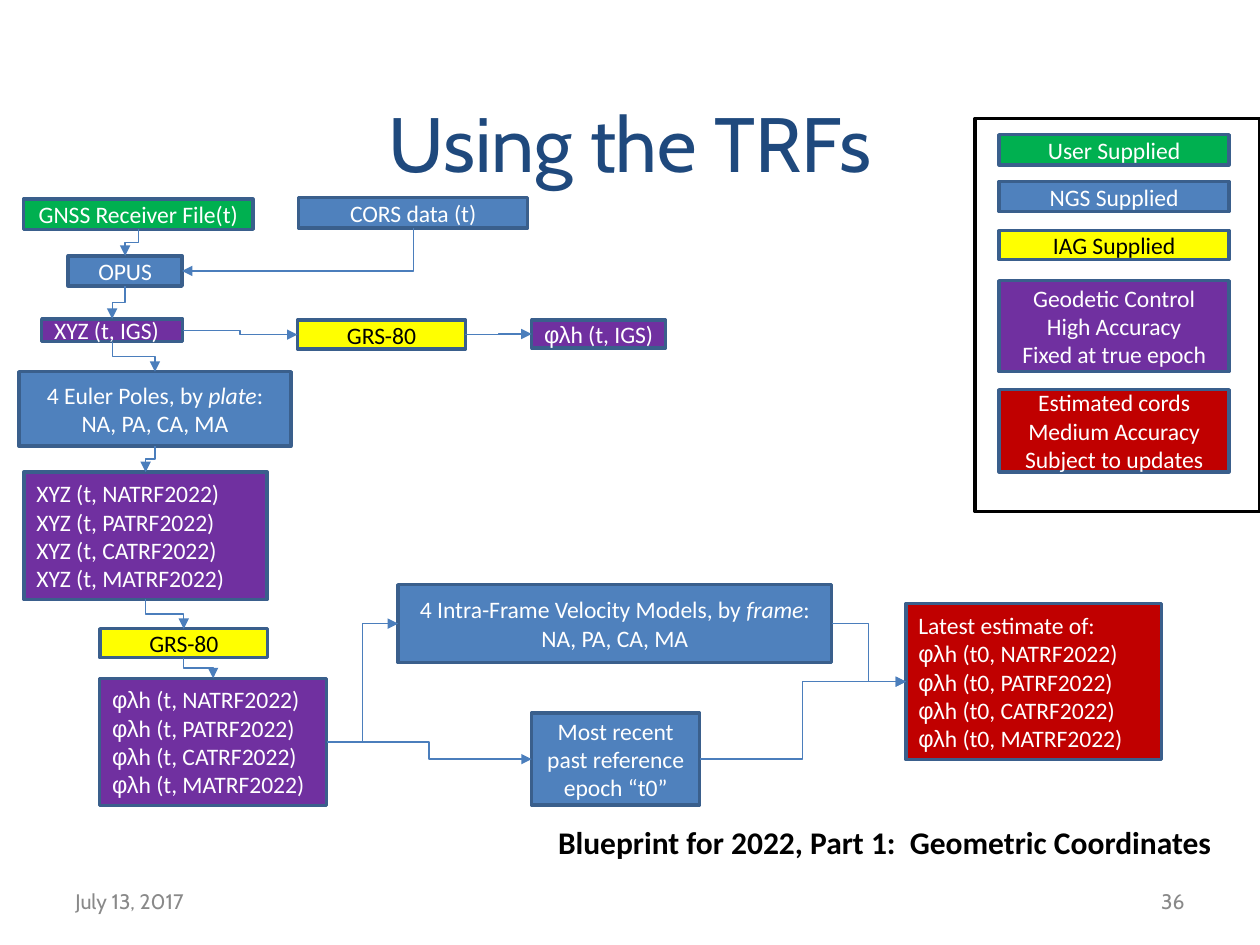
"""Build the slide on using the terrestrial reference frames."""
from lxml import etree
from pptx import Presentation
from pptx.dml.color import RGBColor
from pptx.enum import shapes, text
from pptx.oxml import ns
from pptx.util import Pt

LEFT, MID, RIGHT = text.PP_ALIGN.LEFT, text.PP_ALIGN.CENTER, text.PP_ALIGN.RIGHT
TOP, WEST, BASE, EAST = range(4)
GREEN, BLUE, GOLD, PLUM, RED = "00B050", "4F81BD", "FFFF00", "7030A0", "C00000"
WHITE, BLACK, GREY, NAVY = "FFFFFF", "000000", "898989", "1F497D"
EDGE, WIRE = "3A5F8C", "4B7EBC"


def tint(code):
    return RGBColor.from_string(code)


class Deck:
    def __init__(self, wide, high):
        self.file = Presentation()
        self.file.slide_width, self.file.slide_height = Pt(wide), Pt(high)
        self.slide = self.file.slides.add_slide(self.file.slide_layouts[5])
        self.items = self.slide.shapes

    def fill_in(self, frame, lines, size, face, hue, align, bold=False):
        """Fill a frame; *stars* mark italics, and Greek letters take Arial."""
        frame.vertical_anchor = text.MSO_ANCHOR.MIDDLE
        for n, line in enumerate(lines):
            para = frame.add_paragraph() if n else frame.paragraphs[0]
            para.alignment = align
            font = para.font
            font.size, font.name, font.bold = Pt(size), face, bold
            font.color.rgb = tint(hue)
            for k, part in enumerate(line.split("*")):
                for bit in filter(None, part.partition("φλ")):
                    run = para.add_run()
                    run.text = bit
                    if k % 2:
                        run.font.italic = True
                    if bit == "φλ":
                        run.font.name = "Arial"

    def title(self, words, *area):
        item = self.items.title
        item.left, item.top, item.width, item.height = map(Pt, area)
        self.fill_in(item.text_frame, [words], 44, "Cabin", NAVY, MID)

    def label(self, words, area, size, face, hue, align=LEFT, bold=False, wrap=True):
        frame = self.items.add_textbox(*map(Pt, area)).text_frame
        frame.word_wrap = wrap
        self.fill_in(frame, [words], size, face, hue, align, bold)

    def box(self, area, fill, lines=(), align=MID, edge=EDGE):
        item = self.items.add_shape(shapes.MSO_SHAPE.RECTANGLE, *map(Pt, area))
        item.shadow.inherit = False
        if fill:
            item.fill.solid()
            item.fill.fore_color.rgb = tint(fill)
        else:
            item.fill.background()
        item.line.color.rgb, item.line.width = tint(edge), Pt(2)
        hue = BLACK if fill == GOLD else WHITE
        self.fill_in(item.text_frame, lines, 13.5, "Calibri", hue, align)
        return item

    def join(self, start, out, end, into):
        """Run an elbow arrow from one side of a box to a side of another."""
        wire = self.items.add_connector(shapes.MSO_CONNECTOR.ELBOW, 0, 0, 0, 0)
        wire.begin_connect(start, out)
        wire.end_connect(end, into)
        wire.line.color.rgb, wire.line.width = tint(WIRE), Pt(0.75)
        props = wire._element.spPr
        if out == BASE:
            self.turn(wire, props)
        if (out, into) == (BASE, EAST):
            props.find(ns.qn("a:prstGeom")).set("prst", "bentConnector2")
        tip = etree.SubElement(props.find(ns.qn("a:ln")), ns.qn("a:tailEnd"))
        tip.set("type", "triangle")
        etree.SubElement(props, ns.qn("a:effectLst"))

    def turn(self, wire, props):
        """Rotate an elbow a quarter turn so that it leaves downwards."""
        left, top, right, low = wire.begin_x, wire.begin_y, wire.end_x, wire.end_y
        midx, midy = (left + right) // 2, (top + low) // 2
        run, drop = (right - left) // 2, (low - top) // 2
        wire.begin_x, wire.end_x = midx - drop, midx + drop
        wire.begin_y, wire.end_y = midy + run, midy - run
        props.find(ns.qn("a:xfrm")).set("rot", "5400000")


def main():
    deck = Deck(720, 540)
    deck.title("Using the TRFs", 36, 36, 648, 90)
    zones = [zone + "ATRF2022)" for zone in "NPCM"]

    rover = deck.box((13.5, 113.8, 131, 17.3), GREEN, ["GNSS Receiver File(t)"])
    opus = deck.box((39, 146.2, 65, 17.3), BLUE, ["OPUS"])
    cors = deck.box((170.6, 113, 131, 17.3), BLUE, ["CORS data (t)"])
    igs = deck.box((23.8, 182.2, 80.6, 13), PLUM, ["XYZ (t, IGS)"], LEFT)
    grs = deck.box((170, 183, 96, 16.5), GOLD, ["GRS-80"])
    geo = deck.box((303.8, 183, 76.5, 15.8), PLUM, ["φλh (t, IGS)"], LEFT)
    poles = deck.box((10.8, 212.4, 155.5, 42.5), BLUE,
                     ["4 Euler Poles, by *plate*:", "NA, PA, CA, MA"])
    xyz = deck.box((13.7, 269.8, 139, 72.7), PLUM,
                   ["XYZ (t, " + zone for zone in zones], LEFT)
    grs2 = deck.box((57, 359.3, 96, 16.5), GOLD, ["GRS-80"])
    geo2 = deck.box((57, 387.6, 129.6, 72.7), PLUM,
                    ["φλh (t, " + zone for zone in zones], LEFT)
    model = deck.box((227.5, 334.1, 247.7, 44.6), BLUE,
                     ["4 Intra-Frame Velocity Models, by *frame*:", "NA, PA, CA, MA"])
    epoch = deck.box((303.8, 407.5, 96, 52.6), BLUE,
                     ["Most recent past reference epoch “t0”"])
    last = deck.box((517.7, 344.9, 146.2, 89.3), RED,
                    ["Latest estimate of:"] + ["φλh (t0, " + z for z in zones], LEFT)

    for start, end in ((rover, opus), (opus, igs), (igs, poles), (poles, xyz),
                       (xyz, grs2), (grs2, geo2)):
        deck.join(start, BASE, end, TOP)
    deck.join(cors, BASE, opus, EAST)
    for start, end in ((igs, grs), (grs, geo), (geo2, model), (geo2, epoch),
                       (model, last), (epoch, last)):
        deck.join(start, EAST, end, WEST)

    for top, high, fill, lines in (
        (77, 17.3, GREEN, ["User Supplied"]),
        (103.7, 17.3, BLUE, ["NGS Supplied"]),
        (131.8, 16.6, GOLD, ["IAG Supplied"]),
        (160.4, 52, PLUM, ["Geodetic Control", "High Accuracy", "Fixed at true epoch"]),
        (222.7, 47, RED, ["Estimated cords", "Medium Accuracy", "Subject to updates"]),
    ):
        deck.box((571, top, 131.3, high), fill, lines)
    deck.box((557.3, 67.7, 162.7, 224.6), None, edge=BLACK)

    deck.label("Blueprint for 2022, Part 1:  Geometric Coordinates",
               (311.8, 466.6, 391, 29), 18, "Calibri", BLACK, bold=True, wrap=False)
    deck.label("July 13, 2017", (36, 500.5, 168, 28.75), 12, "Cabin", GREY)
    deck.label("36", (516, 500.5, 168, 28.75), 12, "Cabin", GREY, RIGHT)
    deck.file.save("out.pptx")


if __name__ == "__main__":
    main()
